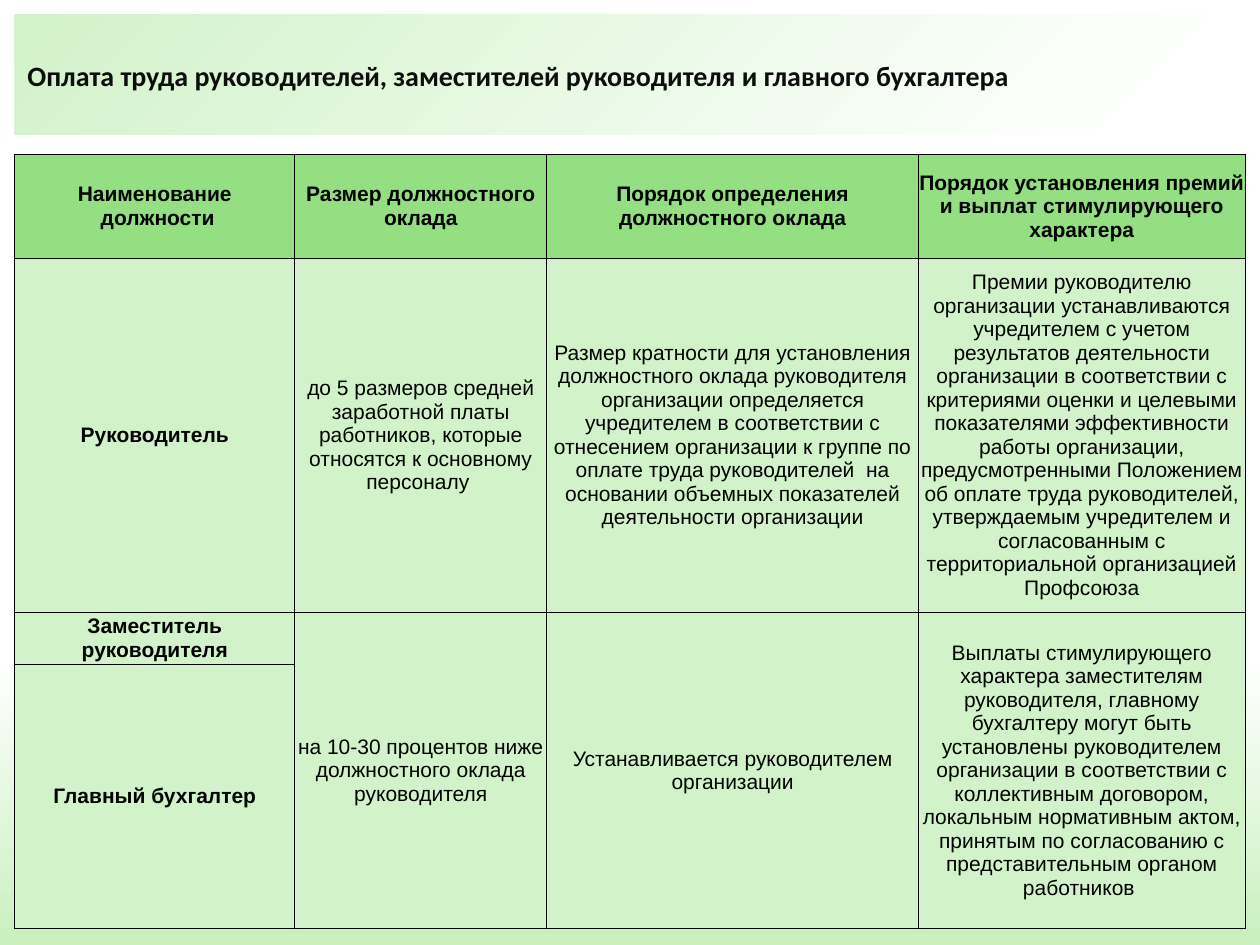
from lxml.etree import SubElement as Sub
from pptx import Presentation
from pptx.dml.color import RGBColor as Rgb
from pptx.enum.text import MSO_ANCHOR as Anchor, MSO_AUTO_SIZE as Auto, PP_ALIGN as Align
from pptx.oxml.ns import qn
from pptx.util import Cm, Pt

COLORS = {
    "head": "93DF81",
    "cell": "D2F2CA",
    "base": "C9F0BE",
    "white": "FFFFFF",
    "title": "0D0D0D",
    "black": "000000",
}
WIDTHS = (5.64, 5.08, 7.49, 6.58)
HEIGHTS = (2.08, 7.14, 1.04, 5.33)
ROWS = (
    (
        "Наименование\n должности",
        "Размер должностного оклада",
        "Порядок определения должностного оклада",
        "Порядок установления премий и выплат стимулирующего характера",
    ),
    (
        "Руководитель",
        "до 5 размеров средней заработной платы работников, которые "
        "относятся к основному персоналу ",
        "Размер кратности для установления должностного оклада руководителя "
        "организации определяется учредителем в соответствии с отнесением "
        "организации к группе по оплате труда руководителей  на основании "
        "объемных показателей деятельности организации",
        "Премии руководителю организации устанавливаются учредителем с учетом "
        "результатов деятельности организации в соответствии с критериями "
        "оценки и целевыми показателями эффективности работы организации, "
        "предусмотренными Положением об оплате труда руководителей, "
        "утверждаемым учредителем и согласованным с территориальной "
        "организацией Профсоюза",
    ),
    (
        "Заместитель руководителя",
        "на 10-30 процентов ниже должностного оклада руководителя",
        "Устанавливается руководителем организации",
        "Выплаты стимулирующего характера заместителям руководителя, главному "
        "бухгалтеру могут быть установлены руководителем организации в "
        "соответствии с коллективным договором, локальным нормативным актом, "
        "принятым по согласованию с представительным органом работников ",
    ),
    ("Главный бухгалтер",),
)


def shade(owner, fill, stops):
    """Set gradient stops (percent, colour name) and return the gradient element."""
    fill.gradient()
    grad = owner.find(".//" + qn("a:gradFill"))
    for part in list(grad):
        grad.remove(part)
    items = Sub(grad, qn("a:gsLst"))
    for pos, name in stops:
        stop = Sub(items, qn("a:gs"), pos=str(pos * 1000))
        Sub(stop, qn("a:srgbClr"), val=COLORS[name])
    return grad


def style(para, face, size, color, bold, align):
    para.alignment = align
    font = para.font
    font.name, font.size, font.bold = face, Pt(size), bold
    font.color.rgb = Rgb.from_string(COLORS[color])


def back(slide):
    stops = ((0, "base"), (30, "white"), (70, "white"))
    grad = shade(slide.element, slide.background.fill, stops)
    Sub(grad, qn("a:lin"), ang="16200000", scaled="0")


def banner(slide, left, top, width, height):
    title = slide.shapes.title
    title.left, title.top = Cm(left), Cm(top)
    title.width, title.height = Cm(width), Cm(height)
    stops = ((0, "cell"), (93, "white"), (94, "white"))
    grad = shade(title.element, title.fill, stops)
    path = Sub(grad, qn("a:path"), path="circle")
    Sub(path, qn("a:fillToRect"), r="100000", b="100000")
    frame = title.text_frame
    frame.text = "Оплата труда руководителей, заместителей руководителя и главного бухгалтера"
    frame.word_wrap, frame.auto_size = True, Auto.NONE
    frame.vertical_anchor = Anchor.MIDDLE
    style(frame.paragraphs[0], "Calibri", 16, "title", True, Align.LEFT)


def edge(cell):
    """Draw thin black lines on all four sides."""
    props = cell._tc.get_or_add_tcPr()
    for spot, side in enumerate(("lnL", "lnR", "lnT", "lnB")):
        line = props.makeelement(qn("a:" + side), {"w": str(Pt(0.5))})
        Sub(Sub(line, qn("a:solidFill")), qn("a:srgbClr"), val=COLORS["black"])
        props.insert(spot, line)


def grid(slide, left, top, width, height):
    shape = slide.shapes.add_table(
        len(ROWS), len(WIDTHS), Cm(left), Cm(top), Cm(width), Cm(height))
    table = shape.table
    table.first_row = table.horz_banding = False
    for col, size in zip(table.columns, WIDTHS):
        col.width = Cm(width * size / sum(WIDTHS))
    for row, size in zip(table.rows, HEIGHTS):
        row.height = Cm(height * size / sum(HEIGHTS))
    for r, row in enumerate(table.rows):
        for c, cell in enumerate(row.cells):
            cell.fill.solid()
            cell.fill.fore_color.rgb = Rgb.from_string(COLORS["cell" if r else "head"])
            edge(cell)
            cell.margin_left = cell.margin_right = 0
            cell.margin_top = cell.margin_bottom = 0
            cell.vertical_anchor = Anchor.MIDDLE
            if c < len(ROWS[r]):
                cell.text = ROWS[r][c]
            for para in cell.text_frame.paragraphs:
                style(para, "Arial", 12, "black", r == 0 or c == 0, Align.CENTER)
    for c in range(1, len(WIDTHS)):
        table.cell(2, c).merge(table.cell(3, c))


def main():
    deck = Presentation()
    deck.slide_width, deck.slide_height = Cm(25.4), Cm(19.05)
    slide = deck.slides.add_slide(deck.slide_layouts[5])
    back(slide)
    banner(slide, 0.3, 0.3, 24.4, 2.42)
    grid(slide, 0.3, 3.12, 24.8, 15.6)
    deck.save("out.pptx")


if __name__ == "__main__":
    main()
